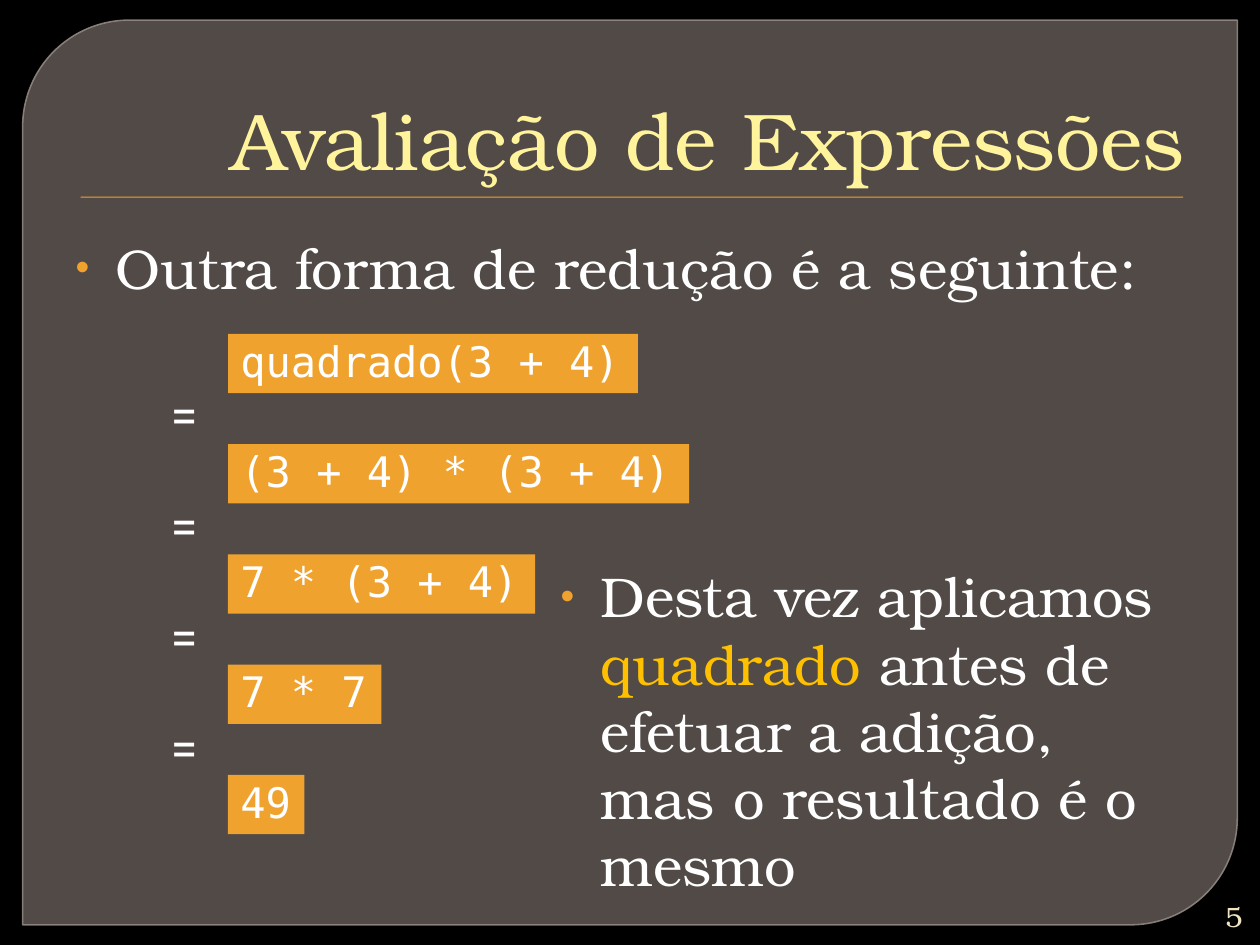
from lxml.etree import SubElement
from pptx import Presentation
from pptx.dml.color import RGBColor
from pptx.enum.shapes import MSO_SHAPE
from pptx.enum.text import MSO_ANCHOR, MSO_AUTO_SIZE, PP_ALIGN
from pptx.oxml.ns import qn
from pptx.util import Inches, Pt

BLACK = RGBColor(0, 0, 0)
PANEL = RGBColor(0x7D, 0x72, 0x6E)
EDGE = RGBColor(0x94, 0x8A, 0x85)
ORANGE = RGBColor(0xF0, 0xA2, 0x2E)
YELLOW = RGBColor(0xFF, 0xF4, 0x9C)
CREAM = RGBColor(0xF0, 0xE3, 0xC0)
GOLD = RGBColor(0xFF, 0xC0, 0x00)
WHITE = RGBColor(0xFF, 0xFF, 0xFF)
SERIF, MONO, SANS = "TeX Gyre Bonum", "DejaVu Sans Mono", "Roboto"

TITLE = "Avaliação de Expressões"
INTRO = [("Outra forma de redução é a seguinte:", WHITE)]
REMARK = [
    ("Desta vez aplicamos ", WHITE),
    ("quadrado", GOLD),
    (" antes de efetuar a adição, mas o resultado é o mesmo", WHITE),
]
STEPS = ["quadrado(3 + 4)", "(3 + 4) * (3 + 4)", "7 * (3 + 4)", "7 * 7", "49"]
NUMBER = "5"

STEP_LEFT, STEP_TOP, STEP_PITCH, STEP_HEIGHT = 1.81, 2.65, 0.875, 0.47
CHAR_WIDTH, PADDING = 0.2035, 0.2
EQUAL_TOP, EQUAL_PITCH = 3, 0.88


def box(values):
    return [Inches(v) for v in values]


def place(sp, values):
    sp.left, sp.top, sp.width, sp.height = box(values)


def add_text(sp, runs, size, font, frame=None, para=None):
    tf = sp.text_frame
    options = {"word_wrap": True, "auto_size": MSO_AUTO_SIZE.NONE, **(frame or {})}
    for name, value in options.items():
        setattr(tf, name, value)
    p = tf.paragraphs[0]
    options = {"alignment": PP_ALIGN.LEFT, "space_before": Pt(0), **(para or {})}
    for name, value in options.items():
        setattr(p, name, value)
    for text, color in runs:
        r = p.add_run()
        r.text = text
        r.font.color.rgb = color
        for name, value in {"size": Pt(size), "name": font}.items():
            setattr(r.font, name, value)
    return p


def add_bullet(p):
    pPr = p._p.get_or_add_pPr()
    pPr.set("marL", str(Inches(0.32)))
    pPr.set("indent", str(Inches(-0.32)))
    color = SubElement(pPr, qn("a:buClr"))
    SubElement(color, qn("a:srgbClr"), val=str(ORANGE))
    SubElement(pPr, qn("a:buSzPct"), val="70000")
    SubElement(pPr, qn("a:buFont"), typeface="Arial")
    SubElement(pPr, qn("a:buChar"), char="•")


def add_block(s, kind, values, color):
    sp = s.shapes.add_shape(kind, *box(values))
    sp.shadow.inherit = False
    sp.fill.solid()
    sp.fill.fore_color.rgb = color
    sp.line.fill.background()
    return sp


def set_opacity(fill, percent):
    color = fill._xPr.find(".//" + qn("a:srgbClr"))
    SubElement(color, qn("a:alpha"), val=str(percent * 1000))


def add_background(s):
    s.background.fill.solid()
    s.background.fill.fore_color.rgb = BLACK
    panel = add_block(s, MSO_SHAPE.ROUND_2_DIAG_RECTANGLE, (0.18, 0.16, 9.64, 7.18), PANEL)
    panel.adjustments[0], panel.adjustments[1] = 0.118, 0
    set_opacity(panel.fill, 65)
    panel.line.color.rgb = EDGE
    panel.line.width = Pt(0.87)
    set_opacity(panel.line.fill, 88)
    rule = add_block(s, MSO_SHAPE.RECTANGLE, (0.64, 1.56, 8.75, 0.01), ORANGE)
    for sp in (rule, panel):
        s.shapes._spTree.insert(2, sp._element)


def add_steps(s):
    hug = {
        "word_wrap": False,
        "auto_size": MSO_AUTO_SIZE.SHAPE_TO_FIT_TEXT,
        "vertical_anchor": MSO_ANCHOR.MIDDLE,
    }
    for i, step in enumerate(STEPS):
        top = STEP_TOP + i * STEP_PITCH
        width = len(step) * CHAR_WIDTH + PADDING
        sp = add_block(s, MSO_SHAPE.RECTANGLE, (STEP_LEFT, top, width, STEP_HEIGHT), ORANGE)
        add_text(sp, [(step, WHITE)], 24, MONO, hug, {"line_spacing": 0.9})
        if i:
            top = EQUAL_TOP + (i - 1) * EQUAL_PITCH
            sp = s.shapes.add_textbox(*box((1.22, top, 0.48, 0.57)))
            add_text(sp, [("=", WHITE)], 28, SANS, hug, {"alignment": PP_ALIGN.CENTER})


def main():
    prs = Presentation()
    prs.slide_width, prs.slide_height = Inches(10), Inches(7.5)
    s = prs.slides.add_slide(prs.slide_layouts[1])
    add_background(s)

    title, body = s.shapes.title, s.placeholders[1]
    place(title, (0.5, 0.28, 9, 1.25))
    add_text(title, [(TITLE, YELLOW)], 46, SERIF,
             {"vertical_anchor": MSO_ANCHOR.BOTTOM}, {"alignment": PP_ALIGN.RIGHT})
    place(body, (0.5, 1.8, 9, 2.42))
    add_bullet(add_text(body, INTRO, 32, SERIF))

    number = s.shapes.add_textbox(*box((9.45, 7.12, 0.51, 0.3)))
    add_text(number, [(NUMBER, CREAM)], 16, SERIF,
             {"vertical_anchor": MSO_ANCHOR.MIDDLE}, {"alignment": PP_ALIGN.RIGHT})
    add_steps(s)
    remark = s.shapes.add_textbox(*box((4.35, 4.41, 5.11, 2.42)))
    add_bullet(add_text(remark, REMARK, 32, SERIF))
    prs.save("out.pptx")


if __name__ == "__main__":
    main()
